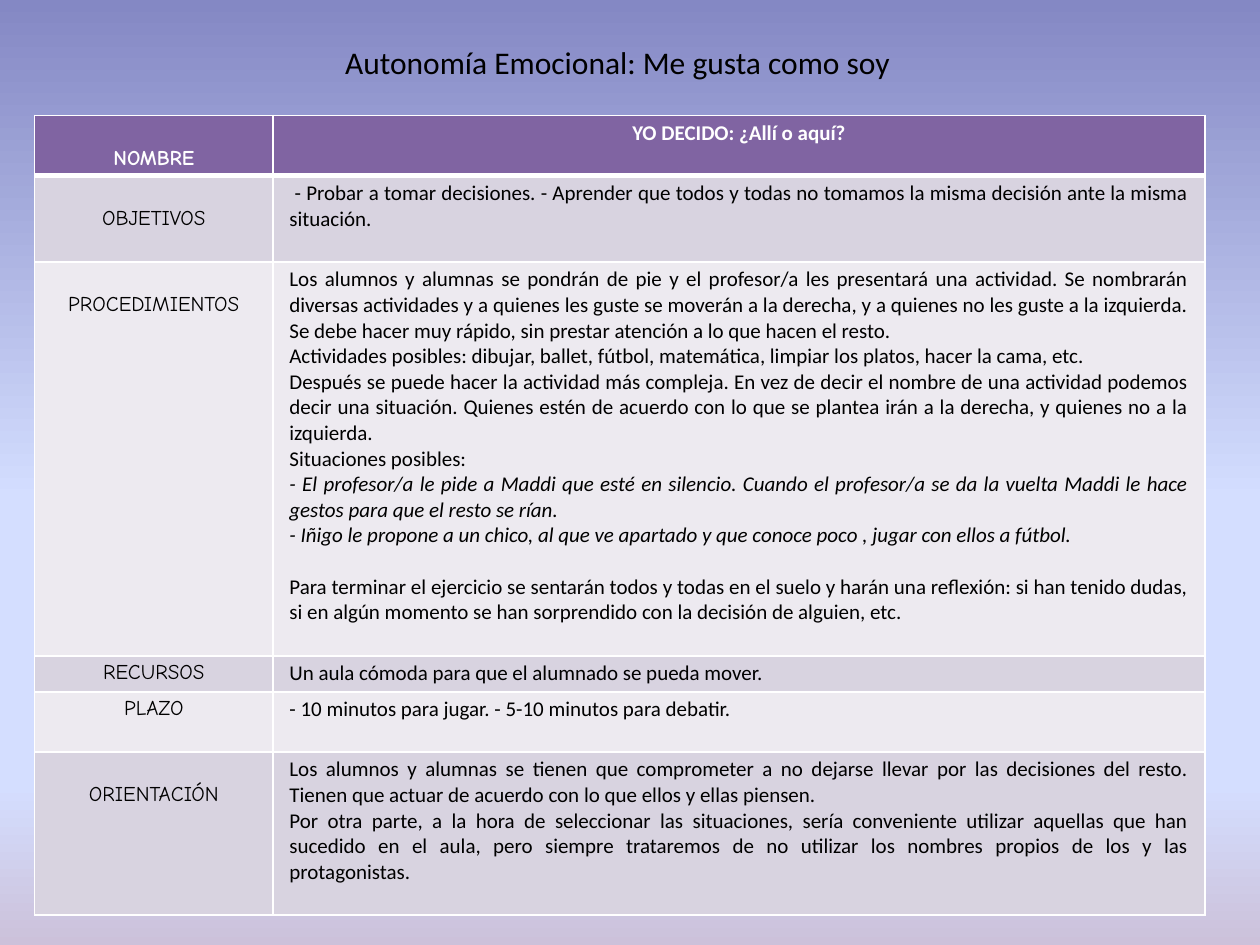
from dataclasses import dataclass

from lxml.etree import SubElement
from pptx import Presentation
from pptx.dml.color import RGBColor
from pptx.enum.text import MSO_ANCHOR, PP_ALIGN
from pptx.oxml import parse_xml
from pptx.oxml.ns import nsdecls, qn
from pptx.util import Pt


@dataclass(frozen=True)
class Theme:
    """Colours, fonts and type sizes of the deck."""
    ink: str = "000000"
    white: str = "FFFFFF"
    header: str = "8064A2"
    bands: tuple = ("D8D3E0", "EDEAF0")
    sky: tuple = ((0, "8488C4"), (53, "D4DEFF"), (83, "D4DEFF"), (100, "CCC1DA"))
    body_font: str = "Calibri"
    label_font: str = "Comic Neue"
    title_size: float = 18
    body_size: float = 12
    line_height: float = 14.65


THEME = Theme()
TITLE = "Autonomía Emocional: Me gusta como soy"
COLUMN_WIDTHS = (136.2, 532.7)
CELL_MARGINS = (9.4, 2.9)

# Each row: label, lowered label, height, paragraphs with their format.
ROWS = (
    ("NOMBRE", True, 34.3, (("YO DECIDO: ¿Allí o aquí?", {}),)),
    ("OBJETIVOS", True, 49.4, (
        (" - Probar a tomar decisiones. - Aprender que todos y todas no tomamos "
         "la misma decisión ante la misma situación.", {}),
    )),
    ("PROCEDIMIENTOS", True, 225.2, (
        ("Los alumnos y alumnas se pondrán de pie y el profesor/a les presentará "
         "una actividad. Se nombrarán diversas actividades y a quienes les guste "
         "se moverán a la derecha, y a quienes no les guste a la izquierda. Se "
         "debe hacer muy rápido, sin prestar atención a lo que hacen el resto. ", {}),
        ("Actividades posibles: dibujar, ballet, fútbol, matemática, limpiar los "
         "platos, hacer la cama, etc.", {}),
        ("Después se puede hacer la actividad más compleja. En vez de decir el "
         "nombre de una actividad podemos decir una situación. Quienes estén de "
         "acuerdo con lo que se plantea irán a la derecha, y quienes no a la "
         "izquierda.", {}),
        ("Situaciones posibles: ", {}),
        ("- El profesor/a le pide a Maddi que esté en silencio. Cuando el "
         "profesor/a se da la vuelta Maddi le hace gestos para que el resto se "
         "rían. ", {"italic": True}),
        ("- Iñigo le propone a un chico, al que ve apartado y que conoce poco , "
         "jugar con ellos a fútbol. ", {"italic": True}),
        ("Para terminar el ejercicio se sentarán todos y todas en el suelo y "
         "harán una reflexión: si han tenido dudas, si en algún momento se han "
         "sorprendido con la decisión de alguien, etc.",
         {"before": THEME.line_height}),
    )),
    ("RECURSOS", False, 20, (
        ("Un aula cómoda para que el alumnado se pueda mover.", {}),
    )),
    ("PLAZO", False, 34.4, (
        ("- 10 minutos para jugar. - 5-10 minutos para debatir.", {}),
    )),
    ("ORIENTACIÓN", True, 93.1, (
        ("Los alumnos y alumnas se tienen que comprometer a no dejarse llevar por "
         "las decisiones del resto. Tienen que actuar de acuerdo con lo que ellos "
         "y ellas piensen.", {}),
        ("Por otra parte, a la hora de seleccionar las situaciones, sería "
         "conveniente utilizar aquellas que han sucedido en el aula, pero siempre "
         "trataremos de no utilizar los nombres propios de los y las "
         "protagonistas.", {}),
    )),
)


def write_paragraph(para, text, font=THEME.body_font, size=THEME.body_size,
                    color=THEME.ink, bold=False, italic=False,
                    align=PP_ALIGN.LEFT, before=0):
    """Write formatted text into a paragraph."""
    para.alignment = align
    para.space_before = Pt(before)
    span = para.add_run()
    span.text = text
    span.font.name = font
    span.font.size = Pt(size)
    span.font.bold = bold
    span.font.italic = italic
    span.font.color.rgb = RGBColor.from_string(color)


def paint_background(page):
    """Fill the page with the vertical sky gradient."""
    fill = page.background.fill
    fill.gradient()
    fill.gradient_angle = 270
    stops = page.element.find(".//" + qn("a:gsLst"))
    stops.clear()
    for position, color in THEME.sky:
        stop = SubElement(stops, qn("a:gs"), pos=str(position * 1000))
        SubElement(stop, qn("a:srgbClr"), val=color)


def add_title(page):
    """Place the title above the table."""
    box = page.shapes.title
    box.left, box.top, box.width, box.height = Pt(190), Pt(21), Pt(351.4), Pt(29)
    frame = box.text_frame
    frame.word_wrap = True
    frame.vertical_anchor = MSO_ANCHOR.TOP
    write_paragraph(frame.paragraphs[0], TITLE, size=THEME.title_size)


def set_borders(cell, top=1, bottom=1):
    """Draw white lines around a cell."""
    properties = cell._tc.get_or_add_tcPr()
    sides = (("lnL", 1), ("lnR", 1), ("lnT", top), ("lnB", bottom))
    for index, (side, width) in enumerate(sides):
        properties.insert(index, parse_xml(
            f'<a:{side} {nsdecls("a")} w="{Pt(width)}"><a:solidFill>'
            f'<a:srgbClr val="{THEME.white}"/></a:solidFill></a:{side}>'))


def fill_cell(cell, paragraphs, fill, lowered=False, **text_format):
    """Set the fill, margins and paragraphs of a cell."""
    side, edge = CELL_MARGINS
    cell.margin_left = cell.margin_right = Pt(side)
    cell.margin_top = Pt(edge + (THEME.line_height if lowered else 0))
    cell.margin_bottom = Pt(edge)
    cell.fill.solid()
    cell.fill.fore_color.rgb = RGBColor.from_string(fill)
    frame = cell.text_frame
    for index, (text, own_format) in enumerate(paragraphs):
        para = frame.add_paragraph() if index else frame.paragraphs[0]
        write_paragraph(para, text, **{**text_format, **own_format})


def add_activity_table(page):
    """Add the table that describes the activity."""
    height = sum(row[2] for row in ROWS)
    table = page.shapes.add_table(
        len(ROWS), len(COLUMN_WIDTHS), Pt(19.8), Pt(66),
        Pt(sum(COLUMN_WIDTHS)), Pt(height)).table
    for column, width in zip(table.columns, COLUMN_WIDTHS):
        column.width = Pt(width)
    for index, (label, lowered, row_height, paragraphs) in enumerate(ROWS):
        table.rows[index].height = Pt(row_height)
        is_header = index == 0
        fill = THEME.header if is_header else THEME.bands[(index - 1) % 2]
        color = THEME.white if is_header else THEME.ink
        body_align = PP_ALIGN.CENTER if is_header else PP_ALIGN.JUSTIFY
        label_cell, body_cell = table.cell(index, 0), table.cell(index, 1)
        fill_cell(label_cell, [(label, {})], fill, lowered, color=color,
                  bold=is_header, font=THEME.label_font, align=PP_ALIGN.CENTER)
        fill_cell(body_cell, paragraphs, fill, color=color,
                  bold=is_header, align=body_align)
        for cell in (label_cell, body_cell):
            set_borders(cell, top=3 if index == 1 else 1,
                        bottom=3 if is_header else 1)


def main():
    """Build and save the deck."""
    deck = Presentation()
    deck.slide_width, deck.slide_height = Pt(720), Pt(540)
    page = deck.slides.add_slide(deck.slide_layouts[5])
    paint_background(page)
    add_activity_table(page)
    add_title(page)
    deck.save("out.pptx")


if __name__ == "__main__":
    main()
